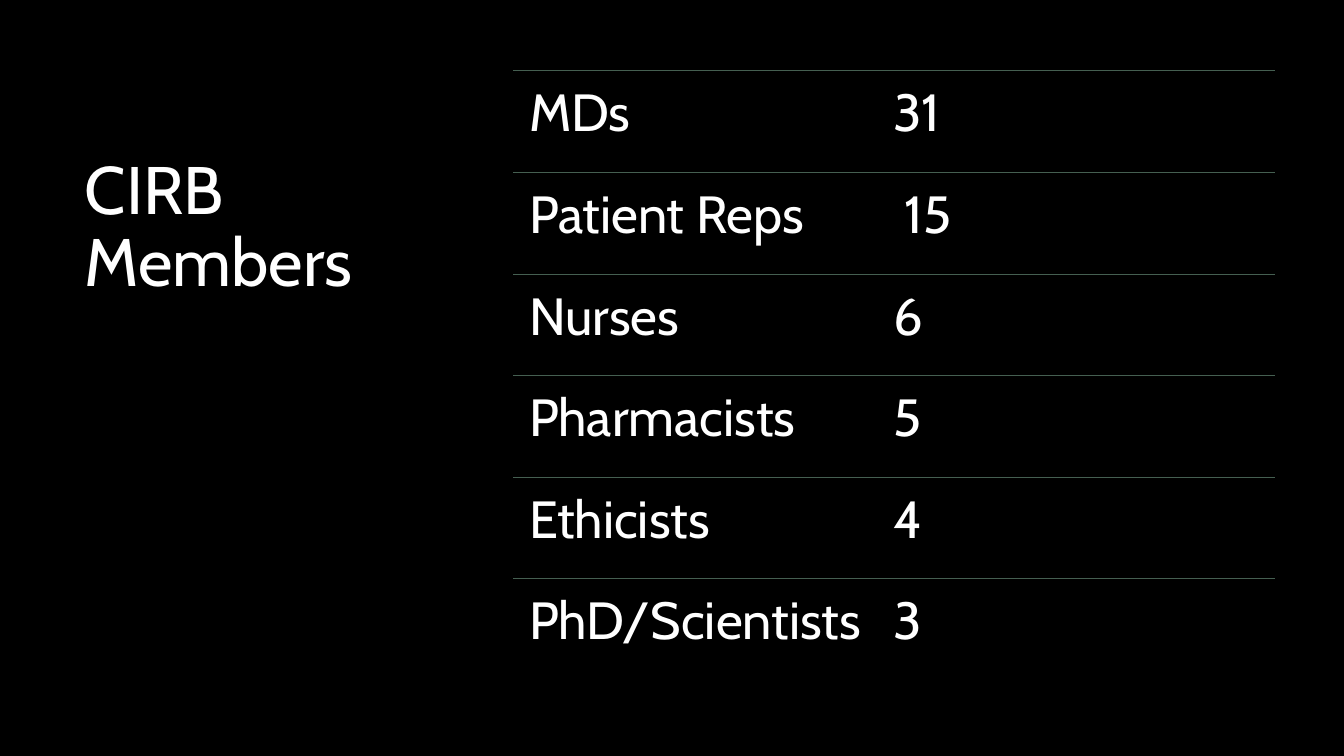
from dataclasses import dataclass

import pptx
import pptx.dml.color
import pptx.enum.shapes
import pptx.enum.text
import pptx.oxml.ns
import pptx.util
from lxml import etree

Cm = pptx.util.Cm
Pt = pptx.util.Pt


@dataclass(frozen=True)
class Theme:
    font: str = "Cabin"
    background: str = "000000"
    text: str = "FFFFFF"
    rule: str = "455F51"
    title_size: float = 36
    row_size: float = 28
    rule_width: float = 0.5
    line_spacing: float = 0.9


class SlideBuilder:
    def __init__(self, page, theme):
        self.page = page
        self.theme = theme
        fill = page.background.fill
        fill.solid()
        fill.fore_color.rgb = self.color(theme.background)

    def color(self, value):
        return pptx.dml.color.RGBColor.from_string(value)

    def format_text(self, frame, size, inset_x, inset_y):
        frame.word_wrap = True
        frame.auto_size = pptx.enum.text.MSO_AUTO_SIZE.NONE
        frame.vertical_anchor = pptx.enum.text.MSO_ANCHOR.TOP
        frame.margin_left = frame.margin_right = Cm(inset_x)
        frame.margin_top = frame.margin_bottom = Cm(inset_y)
        para = frame.paragraphs[0]
        para.alignment = pptx.enum.text.PP_ALIGN.LEFT
        para.line_spacing = self.theme.line_spacing
        para.font.name = self.theme.font
        para.font.size = Pt(size)
        para.font.color.rgb = self.color(self.theme.text)

    def title(self, text, left, top, width, height):
        box = self.page.shapes.title
        box.left, box.top, box.width, box.height = map(Cm, (left, top, width, height))
        box.text_frame.text = text
        self.format_text(box.text_frame, self.theme.title_size, 0.25, 0.13)

    def rule(self, shapes, left, top, width):
        line = shapes.add_connector(
            pptx.enum.shapes.MSO_CONNECTOR.STRAIGHT,
            Cm(left), Cm(top), Cm(left + width), Cm(top),
        )
        line.line.color.rgb = self.color(self.theme.rule)
        line.line.width = Pt(self.theme.rule_width)
        etree.SubElement(line._element.spPr, pptx.oxml.ns.qn("a:effectLst"))

    def row(self, shapes, label, count, tab, left, top, width, height):
        box = shapes.add_textbox(Cm(left), Cm(top), Cm(width), Cm(height))
        para = box.text_frame.paragraphs[0]
        para.text = f"{label}\t{count}"
        tabs = etree.SubElement(para._p.get_or_add_pPr(), pptx.oxml.ns.qn("a:tabLst"))
        etree.SubElement(
            tabs, pptx.oxml.ns.qn("a:tab"), pos=str(int(Cm(tab))), algn="l"
        )
        self.format_text(box.text_frame, self.theme.row_size, 0.3, 0.3)

    def member_list(self, members, left, top, width, pitch):
        group = self.page.shapes.add_group_shape()
        for index, (label, count, tab) in enumerate(members):
            row_top = top + index * pitch
            self.rule(group.shapes, left, row_top, width)
            self.row(group.shapes, label, count, tab, left, row_top, width, pitch)


def main():
    deck = pptx.Presentation()
    deck.slide_width = Cm(25.4)
    deck.slide_height = Cm(14.29)
    page = deck.slides.add_slide(deck.slide_layouts.get_by_name("Title Only"))
    builder = SlideBuilder(page, Theme())
    builder.title("CIRB Members", 1.35, 2.82, 6.1, 9.27)

    count_tab = 6.88
    members = [
        ("MDs", 31, count_tab),
        ("Patient Reps", 15, 7.1),
        ("Nurses", 6, count_tab),
        ("Pharmacists", 5, count_tab),
        ("Ethicists", 4, count_tab),
        ("PhD/Scientists", 3, count_tab),
    ]
    builder.member_list(members, left=9.7, top=1.34, width=14.4, pitch=1.92)
    deck.save("out.pptx")


if __name__ == "__main__":
    main()
